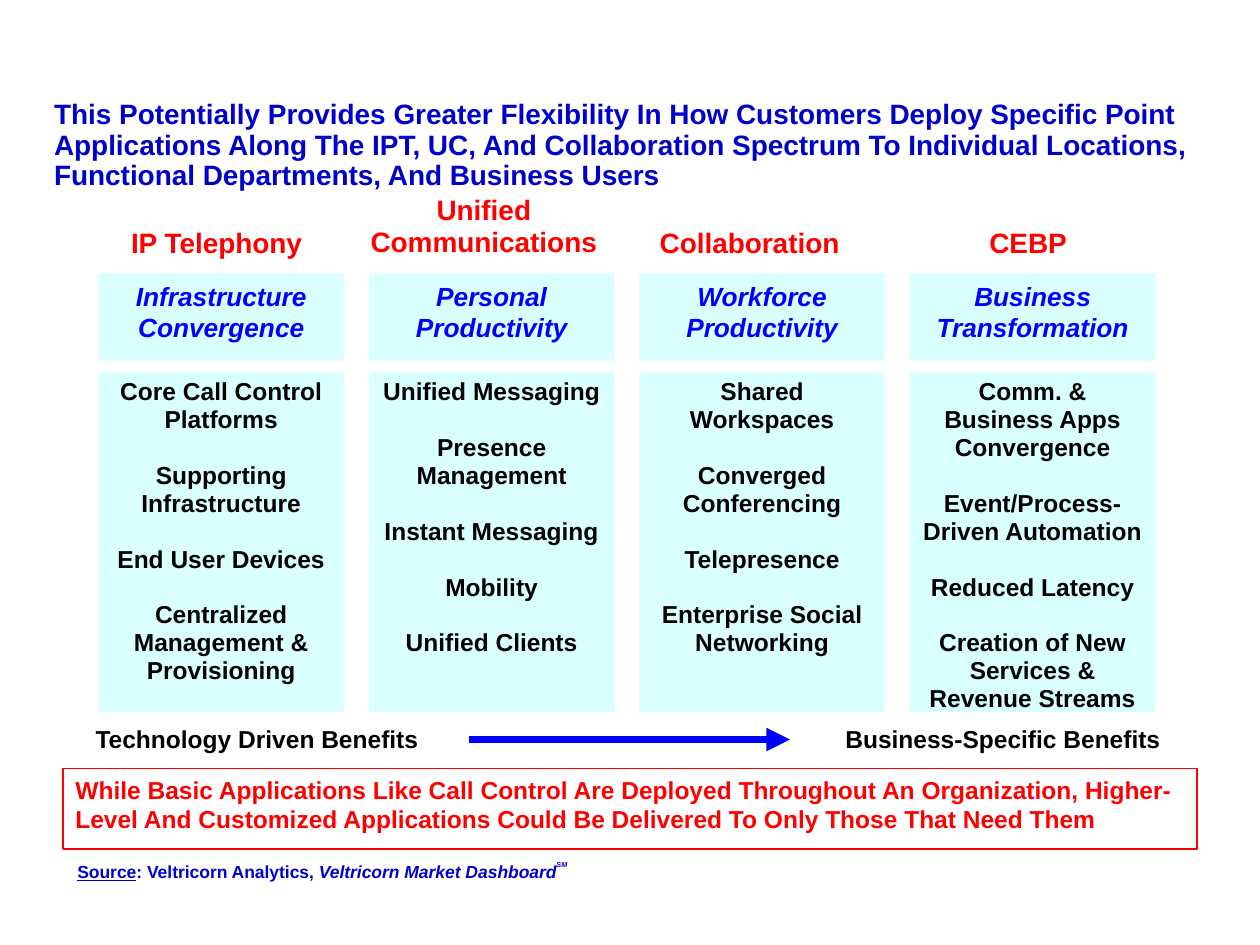
from lxml.etree import SubElement
from pptx import Presentation
from pptx.dml.color import RGBColor
from pptx.enum.shapes import MSO_CONNECTOR as Connector, MSO_SHAPE as Shape
from pptx.enum.text import MSO_ANCHOR as Anchor, PP_ALIGN as Align
from pptx.oxml.ns import qn
from pptx.util import Pt

COLORS = {"navy": "0000CC", "blue": "0000FF", "red": "FF0000",
          "black": "000000", "cyan": "00FFFF"}

TITLE = ("This Potentially Provides Greater Flexibility In How Customers Deploy "
         "Specific Point Applications Along The IPT, UC, And Collaboration Spectrum "
         "To Individual Locations, Functional Departments, And Business Users")
STAGES = [
    {"heading": "IP Telephony", "center": 123.8, "height": 25,
     "goal": ["Infrastructure Convergence"],
     "items": ["Core Call Control Platforms", "Supporting Infrastructure",
               "End User Devices", "Centralized Management & Provisioning"]},
    {"heading": "Unified Communications", "center": 276.5, "height": 44,
     "goal": ["Personal", "Productivity"],
     "items": ["Unified Messaging", "Presence Management", "Instant Messaging",
               "Mobility", "Unified Clients"]},
    {"heading": "Collaboration", "center": 428.4, "height": 25,
     "goal": ["Workforce", "Productivity"],
     "items": ["Shared Workspaces", "Converged Conferencing", "Telepresence",
               "Enterprise Social Networking"]},
    {"heading": "CEBP", "center": 587.5, "height": 25,
     "goal": ["Business Transformation"],
     "items": ["Comm. & Business Apps Convergence", "Event/Process-Driven Automation",
               "Reduced Latency", "Creation of New Services & Revenue Streams"]},
]
BENEFITS = [("Technology Driven Benefits", 47.5, 212.4),
            ("Business-Specific Benefits", 476, 208)]
TAKEAWAY = ("While Basic Applications Like Call Control Are Deployed Throughout An "
            "Organization, Higher-Level And Customized Applications Could Be Delivered "
            "To Only Those That Need Them")
SOURCE = [("Source", 10, {"underline": True}),
          (": Veltricorn Analytics,", 10, {}),
          (" Veltricorn Market Dashboard", 10, {"italic": True}),
          ("SM", 7, {"italic": True})]

COLUMN_LEFT, COLUMN_PITCH, COLUMN_WIDTH = 56.2, 154.55, 140.4
HEADING_WIDTH, HEADING_BOTTOM = 186, 152


def rgb(name):
    return RGBColor.from_string(COLORS[name])


def style(font, size, color, **extra):
    font.color.rgb = rgb(color)
    for key, value in {"name": "Arial", "size": Pt(size), "bold": True, **extra}.items():
        setattr(font, key, value)


def write(shape, paragraphs, size, color, align=Align.LEFT, spacing=1.0, gap=0, **extra):
    frame = shape.text_frame
    frame.word_wrap = True
    frame.vertical_anchor = Anchor.TOP
    for index, words in enumerate(paragraphs):
        paragraph = frame.add_paragraph() if index else frame.paragraphs[0]
        paragraph.alignment = align
        paragraph.line_spacing = spacing
        if index and gap:
            paragraph.space_before = Pt(gap)
        run = paragraph.add_run()
        run.text = words
        style(run.font, size, color, **extra)


def add_text(slide, box, *args, **kwargs):
    write(slide.shapes.add_textbox(*map(Pt, box)), *args, **kwargs)


def add_panel(slide, box):
    """Add a rectangle without shadow, fill or line."""
    panel = slide.shapes.add_shape(Shape.RECTANGLE, *map(Pt, box))
    panel.shadow.inherit = False
    panel.fill.background()
    panel.line.fill.background()
    return panel


def add_tinted_panel(slide, box):
    panel = add_panel(slide, box)
    panel.fill.solid()
    panel.fill.fore_color.rgb = rgb("cyan")
    tint = panel._element.spPr.find(qn("a:solidFill"))[0]
    SubElement(tint, qn("a:alpha"), val="15000")
    return panel


def add_stage(slide, index, stage):
    height = stage["height"]
    add_text(slide, (stage["center"] - HEADING_WIDTH / 2, HEADING_BOTTOM - height,
                     HEADING_WIDTH, height),
             [stage["heading"]], 16, "red", Align.CENTER, 0.95)
    left = COLUMN_LEFT + index * COLUMN_PITCH
    write(add_tinted_panel(slide, (left, 156.4, COLUMN_WIDTH, 49.7)),
          stage["goal"], 15, "blue", Align.CENTER, italic=True)
    write(add_tinted_panel(slide, (left, 212.5, COLUMN_WIDTH, 194.5)),
          stage["items"], 14, "black", Align.CENTER, 0.95, gap=16)


def add_arrow(slide):
    arrow = slide.shapes.add_connector(
        Connector.STRAIGHT, Pt(268), Pt(422.6), Pt(451.4), Pt(422.6))
    arrow.line.color.rgb = rgb("blue")
    arrow.line.width = Pt(4.5)
    properties = arrow._element.spPr
    SubElement(properties.find(qn("a:ln")), qn("a:tailEnd"), type="triangle")
    SubElement(properties, qn("a:effectLst"))


def add_source(slide):
    note = slide.shapes.add_textbox(Pt(30.2), Pt(488.2), Pt(301), Pt(19.4))
    note.text_frame.word_wrap = False
    paragraph = note.text_frame.paragraphs[0]
    paragraph.alignment = Align.RIGHT
    for words, size, extra in SOURCE:
        run = paragraph.add_run()
        run.text = words
        style(run.font, size, "navy", **extra)
    run._r.get_or_add_rPr().set("baseline", "90000")


def main():
    deck = Presentation()
    deck.slide_width, deck.slide_height = Pt(720), Pt(540)
    slide = deck.slides.add_slide(deck.slide_layouts[6])

    add_text(slide, (23.8, 54, 672, 59), [TITLE], 16, "navy", spacing=0.9)
    for index, stage in enumerate(STAGES):
        add_stage(slide, index, stage)
    for words, left, width in BENEFITS:
        add_text(slide, (left, 410.4, width, 24), [words], 14, "black")
    add_arrow(slide)

    takeaway = add_panel(slide, (36, 439.2, 648, 46))
    takeaway.line.color.rgb = rgb("red")
    takeaway.line.width = Pt(1)
    write(takeaway, [TAKEAWAY], 14, "red")
    add_source(slide)
    deck.save("out.pptx")


if __name__ == "__main__":
    main()
